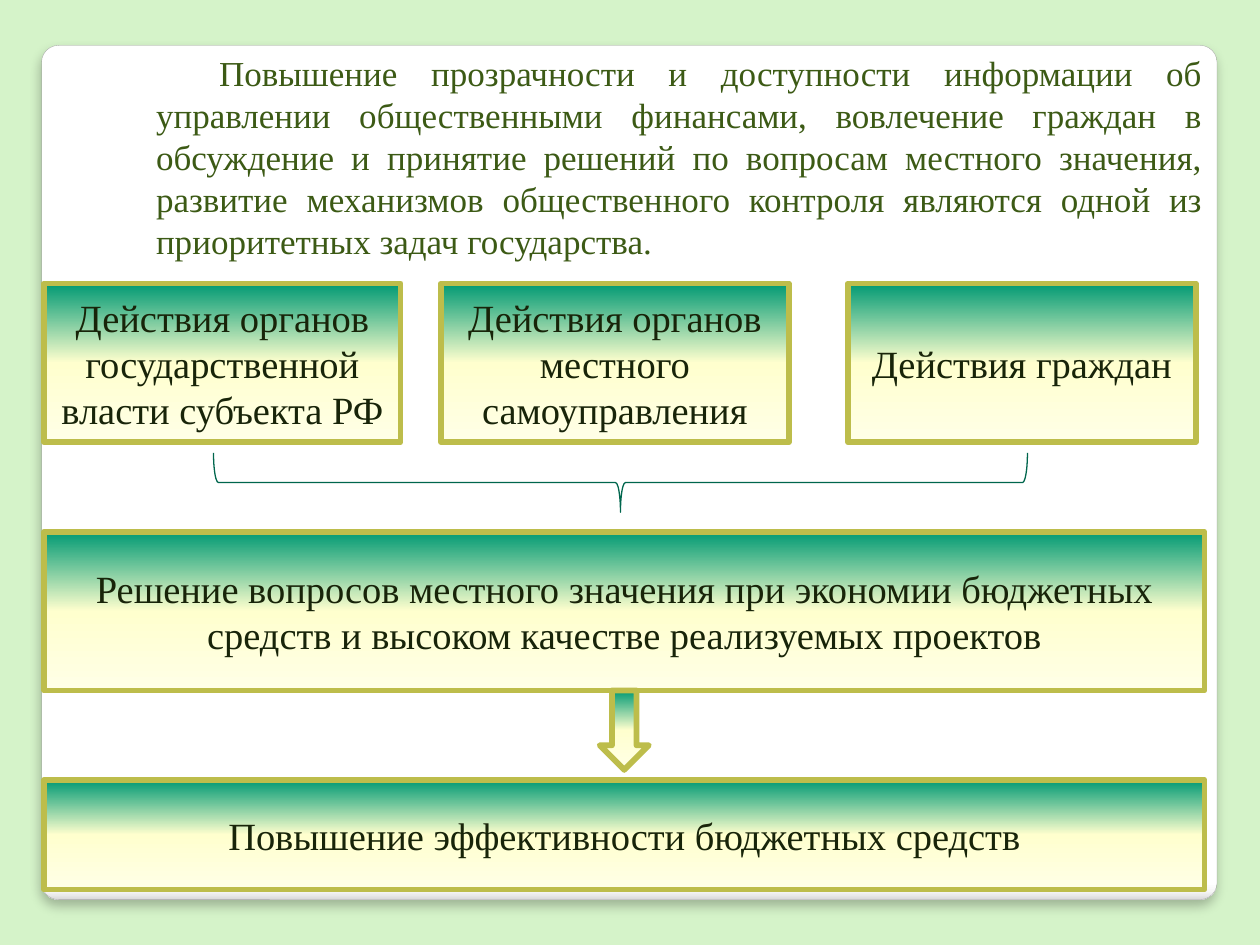
from collections import namedtuple

from lxml.etree import SubElement
from pptx import Presentation
from pptx.dml.color import RGBColor
from pptx.enum.shapes import MSO_SHAPE
from pptx.enum.text import MSO_ANCHOR, PP_ALIGN
from pptx.oxml.ns import qn
from pptx.util import Inches, Pt

BACKGROUND = RGBColor(0xD5, 0xF3, 0xC9)
WHITE = RGBColor(0xFF, 0xFF, 0xFF)
PALE = RGBColor(0xF7, 0xF7, 0xF7)
SILVER = RGBColor(0xDA, 0xDA, 0xDA)
GREY = RGBColor(0xA4, 0xA4, 0xA4)
BLACK = RGBColor(0x00, 0x00, 0x00)
TEAL = RGBColor(0x00, 0x99, 0x73)
CREAM = RGBColor(0xFF, 0xFF, 0xCE)
IVORY = RGBColor(0xFF, 0xFF, 0xE7)
OLIVE = RGBColor(0xBD, 0xBD, 0x4B)
BRACE_GREEN = RGBColor(0x00, 0x66, 0x4D)
INTRO_GREEN = RGBColor(0x3C, 0x5A, 0x15)
INK = RGBColor(0x18, 0x24, 0x09)

PANEL_STOPS = [(0, WHITE), (98, WHITE), (99, PALE), (100, SILVER)]
CARD_STOPS = [(0, TEAL), (50, CREAM), (100, IVORY)]
FONT = "Times New Roman"

INTRO = (
    "\tПовышение прозрачности и доступности информации об управлении "
    "общественными финансами, вовлечение граждан в обсуждение и принятие "
    "решений по вопросам местного значения, развитие механизмов общественного "
    "контроля являются одной из приоритетных задач государства."
)
ACTIONS = [
    (0, 30.96, "Действия органов государственной власти субъекта РФ"),
    (34.46, 30.2, "Действия органов местного самоуправления"),
    (69.8, 30.2, "Действия граждан"),
]
SOLUTION = (
    "Решение вопросов местного значения при экономии бюджетных средств "
    "и высоком качестве реализуемых проектов"
)
RESULT = "Повышение эффективности бюджетных средств"

Box = namedtuple("Box", "left top width height")


def part(box, left, top, width, height):
    """Return the part of a box given in percent of its size."""
    return Box(
        int(box.left + box.width * left / 100),
        int(box.top + box.height * top / 100),
        int(box.width * width / 100),
        int(box.height * height / 100),
    )


def write(tf, text, size=22, color=INK, align=PP_ALIGN.CENTER, anchor=MSO_ANCHOR.MIDDLE):
    """Put one formatted paragraph into a text frame."""
    tf.word_wrap = True
    tf.vertical_anchor = anchor
    p = tf.paragraphs[0]
    p.alignment = align
    r = p.add_run()
    r.text = text
    r.font.name = FONT
    r.font.size = Pt(size)
    r.font.color.rgb = color


def fill_gradient(sp, stops):
    """Fill a shape from top to bottom with colour stops in percent."""
    sp.fill.gradient()
    sp.fill.gradient_angle = 270
    gs_list = sp._element.spPr.find(qn("a:gradFill")).find(qn("a:gsLst"))
    gs_list.clear()
    for position, color in stops:
        gs = SubElement(gs_list, qn("a:gs"), pos=str(position * 1000))
        SubElement(gs, qn("a:srgbClr"), val=str(color))


def add_shape(s, kind, box, line, width, stops=None):
    """Add a preset shape with a gradient or no fill and a round-joined line."""
    sp = s.shapes.add_shape(kind, *box)
    sp.shadow.inherit = False
    if stops:
        fill_gradient(sp, stops)
    else:
        sp.fill.background()
    sp.line.color.rgb = line
    sp.line.width = Pt(width)
    SubElement(sp._element.spPr.find(qn("a:ln")), qn("a:round"))
    return sp


def add_card(s, box, text):
    """Add a framed gradient card with centred text."""
    sp = add_shape(s, MSO_SHAPE.RECTANGLE, box, OLIVE, 3.35, CARD_STOPS)
    write(sp.text_frame, text)


def add_panel(s, box):
    """Add the rounded white panel with a soft shadow below."""
    sp = add_shape(s, MSO_SHAPE.ROUNDED_RECTANGLE, box, GREY, 0.16, PANEL_STOPS)
    sp.adjustments[0] = 0.02
    effects = sp._element.spPr.find(qn("a:effectLst"))
    shadow = SubElement(
        effects, qn("a:outerShdw"), blurRad=str(Pt(6)), dist=str(Pt(4)),
        dir="5400000", algn="tl", rotWithShape="0",
    )
    color = SubElement(shadow, qn("a:srgbClr"), val=str(BLACK))
    SubElement(color, qn("a:alpha"), val="25000")


def add_intro(s, box):
    """Add the justified introduction."""
    tf = s.shapes.add_textbox(*box).text_frame
    write(tf, INTRO, size=20, color=INTRO_GREEN, align=PP_ALIGN.JUSTIFY, anchor=MSO_ANCHOR.TOP)


def add_actions(s, box):
    """Add the row of action cards."""
    for left, width, text in ACTIONS:
        add_card(s, part(box, left, 0, width, 100), text)


def add_brace(s, box):
    """Add a brace that spans the box and points down."""
    turned = Box(
        box.left + (box.width - box.height) // 2,
        box.top + (box.height - box.width) // 2,
        box.height,
        box.width,
    )
    sp = add_shape(s, MSO_SHAPE.LEFT_BRACE, turned, BRACE_GREEN, 0.75)
    sp.rotation = 270


def add_outcome(s, box):
    """Add the solution card, the arrow and the result card."""
    add_card(s, part(box, 0, 0, 100, 44.37), SOLUTION)
    add_card(s, part(box, 0, 69.37, 100, 30.63), RESULT)
    arrow = part(box, 47.88, 44.37, 4.23, 22.18)
    add_shape(s, MSO_SHAPE.DOWN_ARROW, arrow, OLIVE, 3.35, CARD_STOPS)


def main():
    """Build and save the slide."""
    prs = Presentation()
    prs.slide_width, prs.slide_height = Inches(10), Inches(7.5)
    s = prs.slides.add_slide(prs.slide_layouts[6])
    s.background.fill.solid()
    s.background.fill.fore_color.rgb = BACKGROUND
    page = Box(0, 0, prs.slide_width, prs.slide_height)
    add_panel(s, part(page, 3.3, 4.8, 93.3, 90.4))
    add_intro(s, part(page, 11.4, 4.8, 85, 23.73))
    add_actions(s, part(page, 3.5, 30, 91.4, 16.8))
    add_brace(s, part(page, 16.95, 47.93, 64.6, 6.27))
    add_outcome(s, part(page, 3.5, 56.27, 92.1, 37.87))
    prs.save("out.pptx")


if __name__ == "__main__":
    main()
